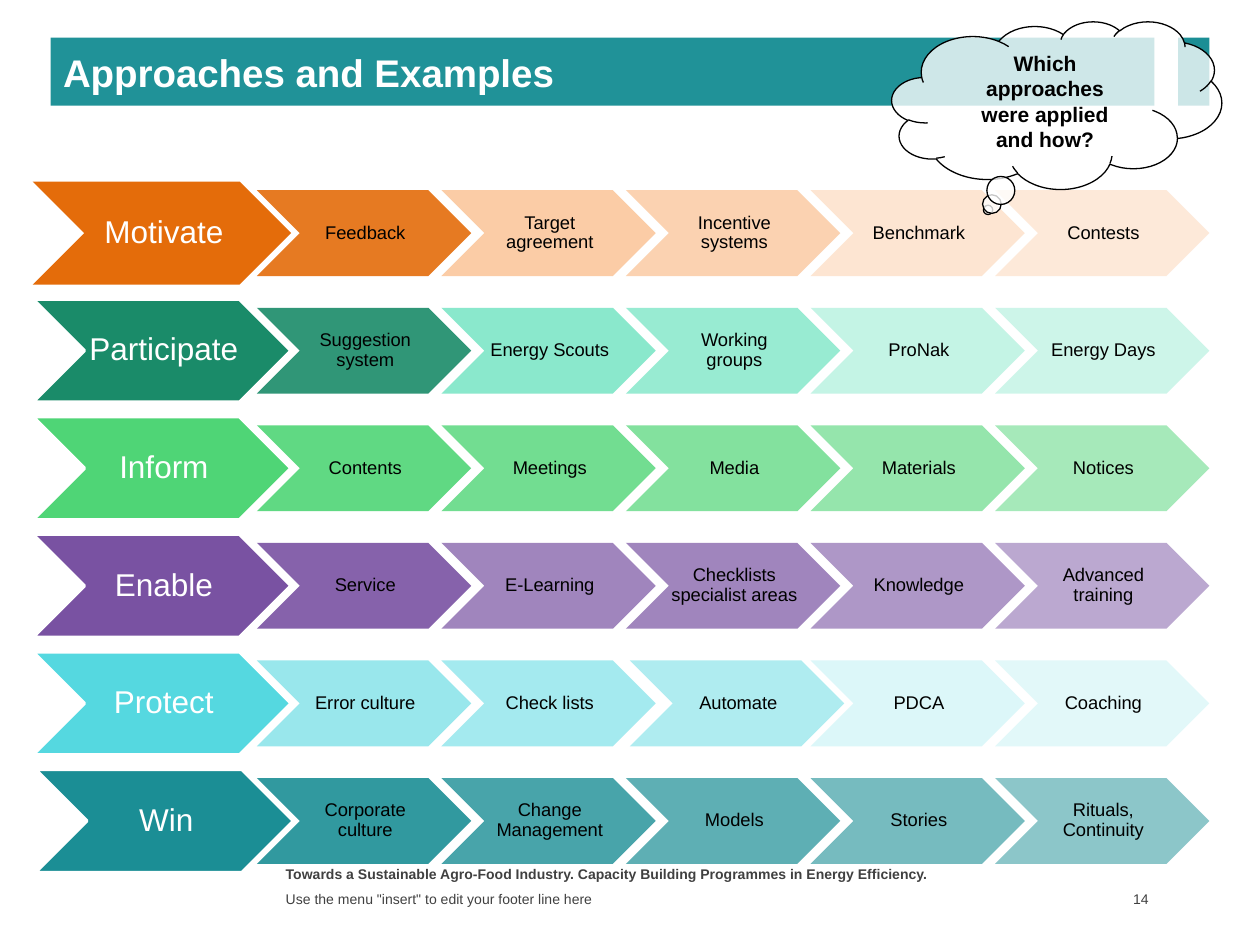
from dataclasses import dataclass
from typing import Optional

from lxml.etree import SubElement
from pptx import Presentation
from pptx.dml.color import RGBColor
from pptx.enum.shapes import MSO_SHAPE
from pptx.enum.text import MSO_ANCHOR, MSO_AUTO_SIZE, PP_ALIGN
from pptx.oxml.ns import qn
from pptx.util import Cm, Pt

WHITE = RGBColor(0xFF, 0xFF, 0xFF)
BLACK = RGBColor(0x00, 0x00, 0x00)
GREY = RGBColor(0x40, 0x40, 0x40)
BAND = RGBColor(0x20, 0x92, 0x98)
ORANGE = RGBColor(0xE4, 0x6C, 0x0A)
PEACH = RGBColor(0xFA, 0xC0, 0x90)
PALE_PEACH = RGBColor(0xFC, 0xD5, 0xB5)
FOREST = RGBColor(0x1A, 0x8B, 0x69)
MINT = RGBColor(0x6D, 0xE3, 0xC0)
PALE_MINT = RGBColor(0x9D, 0xED, 0xD5)
GREEN = RGBColor(0x4F, 0xD5, 0x76)
PURPLE = RGBColor(0x79, 0x52, 0xA2)
CYAN = RGBColor(0x55, 0xD8, 0xE0)
LIGHT_CYAN = RGBColor(0x8E, 0xE5, 0xEB)
PALE_CYAN = RGBColor(0xC6, 0xF2, 0xF5)
TEAL = RGBColor(0x1B, 0x8E, 0x95)

FONT = "Arial"
FIRST_ROW_MIDDLE, ROW_PITCH = 4.7, 2.37
LEAD_LEFT, LEAD_WIDTH, LEAD_HEIGHT = 0.66, 5.21, 2.08
STEP_LEFT, STEP_PITCH, STEP_WIDTH, STEP_HEIGHT = 5.18, 3.72, 4.32, 1.73


@dataclass
class Step:
    label: str
    color: RGBColor
    opacity: int
    shift: float = 0


@dataclass
class Approach:
    label: str
    color: RGBColor
    steps: list[Step]
    outlined: bool = True
    shift: float = 0


@dataclass
class Footer:
    text: str
    left: float
    top: float
    width: float
    bold: bool = False
    anchor: MSO_ANCHOR = MSO_ANCHOR.MIDDLE
    align: PP_ALIGN = PP_ALIGN.LEFT
    right_margin: float = 0.25


APPROACHES = [
    Approach("Motivate", ORANGE, [
        Step("Feedback", ORANGE, 90),
        Step("Target agreement", PEACH, 80),
        Step("Incentive systems", PEACH, 70),
        Step("Benchmark", PALE_PEACH, 60),
        Step("Contests", PALE_PEACH, 50)], outlined=False),
    Approach("Participate", FOREST, [
        Step("Suggestion system", FOREST, 90),
        Step("Energy Scouts", MINT, 80),
        Step("Working groups", MINT, 70),
        Step("ProNak", PALE_MINT, 60),
        Step("Energy Days", PALE_MINT, 50)]),
    Approach("Inform", GREEN, [
        Step("Contents", GREEN, 90),
        Step("Meetings", GREEN, 80),
        Step("Media", GREEN, 70),
        Step("Materials", GREEN, 60),
        Step("Notices", GREEN, 50)]),
    Approach("Enable", PURPLE, [
        Step("Service", PURPLE, 90),
        Step("E-Learning", PURPLE, 70),
        Step("Checklists specialist areas", PURPLE, 70),
        Step("Knowledge", PURPLE, 60),
        Step("Advanced training", PURPLE, 50)]),
    Approach("Protect", CYAN, [
        Step("Error culture", LIGHT_CYAN, 90),
        Step("Check lists", LIGHT_CYAN, 80),
        Step("Automate", LIGHT_CYAN, 70, shift=0.08),
        Step("PDCA", PALE_CYAN, 60),
        Step("Coaching", PALE_CYAN, 50)]),
    Approach("Win", TEAL, [
        Step("Corporate culture", TEAL, 90),
        Step("Change Management", TEAL, 80),
        Step("Models", TEAL, 70),
        Step("Stories", TEAL, 60),
        Step("Rituals, Continuity", TEAL, 50)], shift=0.05),
]

FOOTERS = [
    Footer("Towards a Sustainable Agro-Food Industry. "
           "Capacity Building Programmes in Energy Efficiency.",
           5.51, 17.32, 13.97, bold=True, anchor=MSO_ANCHOR.TOP),
    Footer('Use the menu "insert" to edit your footer line here', 5.51, 17.87, 13.97),
    Footer("14", 21.84, 17.87, 1.42, align=PP_ALIGN.RIGHT, right_margin=0.1),
]


def write(shape, text: str, size: float, color: RGBColor, bold: bool = False,
          align: PP_ALIGN = PP_ALIGN.CENTER, anchor: MSO_ANCHOR = MSO_ANCHOR.MIDDLE,
          margins: tuple = (0.25, 0.13, 0.25, 0.13), spacing: float = 1.0) -> None:
    """Fill the shape with one paragraph; margins run left, top, right, bottom."""
    frame = shape.text_frame
    frame.word_wrap = True
    frame.auto_size = MSO_AUTO_SIZE.NONE
    frame.vertical_anchor = anchor
    (frame.margin_left, frame.margin_top,
     frame.margin_right, frame.margin_bottom) = map(Cm, margins)
    para = frame.paragraphs[0]
    para.alignment = align
    para.line_spacing = spacing
    span = para.add_run()
    span.text = text
    span.font.name = FONT
    span.font.size = Pt(size)
    span.font.bold = bold
    span.font.color.rgb = color


def add_filled(page, preset: MSO_SHAPE, left: float, top: float, width: float,
               height: float, color: RGBColor, opacity: int = 100,
               line: Optional[RGBColor] = None, line_width: float = 0):
    shape = page.shapes.add_shape(preset, Cm(left), Cm(top), Cm(width), Cm(height))
    shape.shadow.inherit = False
    shape.fill.solid()
    shape.fill.fore_color.rgb = color
    if opacity < 100:
        color_element = shape._element.spPr.find(qn("a:solidFill"))[0]
        SubElement(color_element, qn("a:alpha")).set("val", str(opacity * 1000))
    if line is None:
        shape.line.fill.background()
    else:
        shape.line.color.rgb = line
        shape.line.width = Pt(line_width)
    return shape


def add_approach(page, approach: Approach, middle: float) -> None:
    lead = add_filled(page, MSO_SHAPE.CHEVRON, LEAD_LEFT + approach.shift,
                      middle - LEAD_HEIGHT / 2, LEAD_WIDTH, LEAD_HEIGHT, approach.color,
                      line=WHITE if approach.outlined else None, line_width=2)
    write(lead, approach.label, 18, WHITE, margins=(0.08, 0.03, 0, 0.03), spacing=0.9)
    for column, step in enumerate(approach.steps):
        box = add_filled(page, MSO_SHAPE.CHEVRON,
                         STEP_LEFT + column * STEP_PITCH + step.shift,
                         middle - STEP_HEIGHT / 2, STEP_WIDTH, STEP_HEIGHT,
                         step.color, step.opacity)
        write(box, step.label, 10.5, BLACK, margins=(0.05, 0.03, 0, 0.03), spacing=0.9)


def add_footer(page, footer: Footer) -> None:
    box = page.shapes.add_textbox(Cm(footer.left), Cm(footer.top), Cm(footer.width), Cm(0.5))
    write(box, footer.text, 8, GREY, footer.bold, footer.align, footer.anchor,
          (0.25, 0.13, footer.right_margin, 0.13))


def add_title(page, text: str) -> None:
    title = page.shapes.title
    title.left, title.top, title.width, title.height = map(Cm, (1.02, 0.76, 22.25, 1.37))
    title.fill.solid()
    title.fill.fore_color.rgb = BAND
    write(title, text, 22, WHITE, bold=True, align=PP_ALIGN.LEFT)


def main() -> None:
    deck = Presentation()
    deck.slide_width, deck.slide_height = Cm(25.4), Cm(19.05)
    page = deck.slides.add_slide(deck.slide_layouts[5])
    add_title(page, "Approaches and Examples")
    add_filled(page, MSO_SHAPE.RECTANGLE, 23.75, 0.76, 0.63, 1.37, TEAL)
    for footer in FOOTERS:
        add_footer(page, footer)
    for row, approach in enumerate(APPROACHES):
        add_approach(page, approach, FIRST_ROW_MIDDLE + row * ROW_PITCH)
    cloud = add_filled(page, MSO_SHAPE.CLOUD_CALLOUT, 17.98, 0.43, 6.65, 3.38,
                       WHITE, 78, BLACK, 0.75)
    write(cloud, "Which approaches were applied and how?", 12, BLACK, bold=True,
          margins=(0.51, 0.13, 0.51, 0.13))
    deck.save("out.pptx")


if __name__ == "__main__":
    main()
